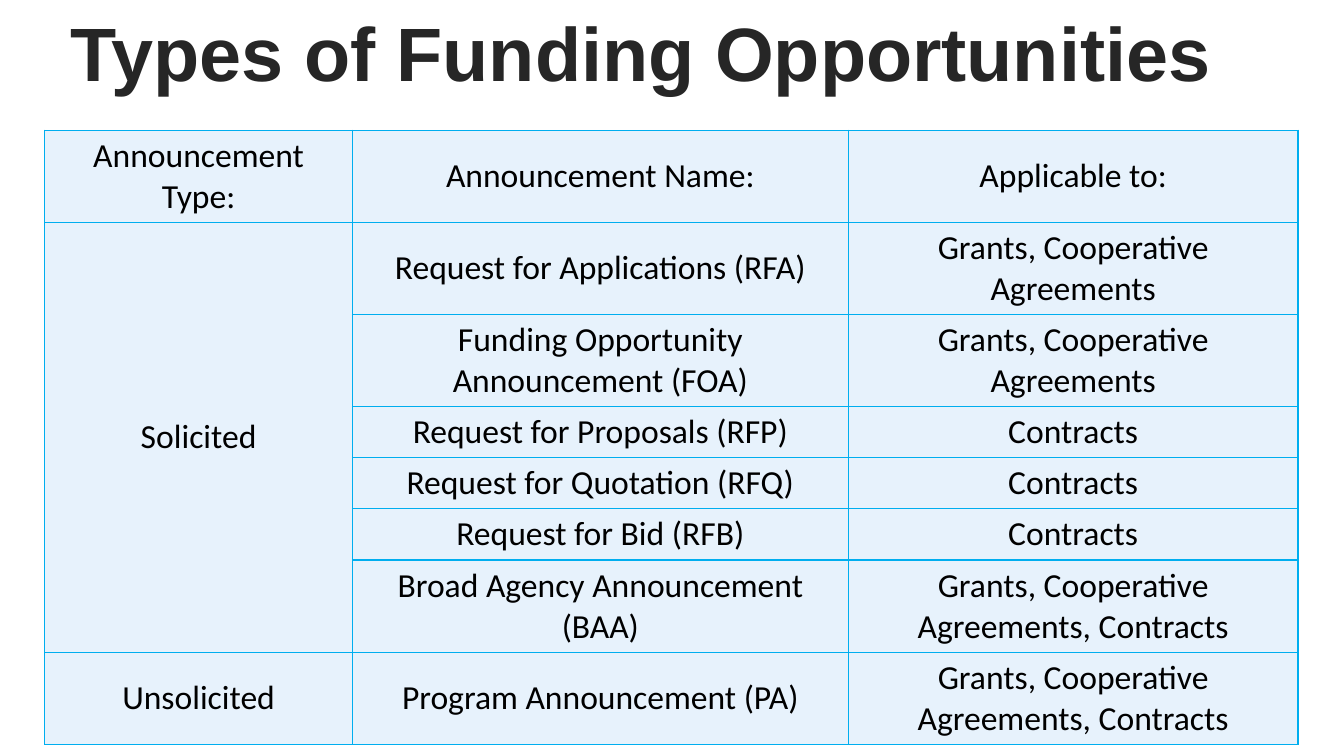
import pptx
import pptx.dml.color
import pptx.enum.text
import pptx.oxml
import pptx.oxml.ns
import pptx.util
from pptx.util import Cm

RGBColor = pptx.dml.color.RGBColor
WHITE = RGBColor(0xFF, 0xFF, 0xFF)
BLACK = RGBColor(0, 0, 0)
CHARCOAL = RGBColor(0x26, 0x26, 0x26)
PALE_BLUE = RGBColor(0xE7, 0xF2, 0xFC)
CYAN = RGBColor(0x00, 0xAE, 0xEF)

PP_ALIGN = pptx.enum.text.PP_ALIGN
MIDDLE = pptx.enum.text.MSO_ANCHOR.MIDDLE

GRANTS = "Grants, Cooperative Agreements"
ALL_AWARDS = "Grants, Cooperative Agreements, Contracts"
ROWS = [
    ("Announcement Type:", "Announcement Name:", "Applicable to:"),
    ("Solicited", "Request for Applications (RFA)", GRANTS),
    ("", "Funding Opportunity Announcement (FOA)", GRANTS),
    ("", "Request for Proposals (RFP)", "Contracts"),
    ("", "Request for Quotation (RFQ)", "Contracts"),
    ("", "Request for Bid (RFB)", "Contracts"),
    ("", "Broad Agency Announcement (BAA)", ALL_AWARDS),
    ("Unsolicited", "Program Announcement (PA)", ALL_AWARDS),
]
COLUMN_WIDTHS = [7.75, 12.5, 11.33]
ONE_LINE, TWO_LINES = 1.29, 2.32


class Deck:
    title_font, title_size = "Arial", 54
    body_font, body_size = "Calibri", 24
    border_width = 1

    def __init__(self):
        self.prs = pptx.Presentation()
        self.prs.slide_width, self.prs.slide_height = Cm(33.87), Cm(19.05)

    def add_slide(self):
        self.s = self.prs.slides.add_slide(self.prs.slide_layouts[5])
        self.s.background.fill.solid()
        self.s.background.fill.fore_color.rgb = WHITE

    def add_run(self, p, text, font, size, color, bold=False):
        r = p.add_run()
        r.text = text
        r.font.name, r.font.size = font, pptx.util.Pt(size)
        r.font.bold, r.font.color.rgb = bold, color

    def title(self, text, left, top, width, height):
        sp = self.s.shapes.title
        sp.left, sp.top, sp.width, sp.height = map(Cm, (left, top, width, height))
        tf = sp.text_frame
        tf.word_wrap = True
        tf.auto_size = pptx.enum.text.MSO_AUTO_SIZE.NONE
        tf.vertical_anchor = MIDDLE
        p = tf.paragraphs[0]
        p.alignment = PP_ALIGN.LEFT
        self.add_run(p, text, self.title_font, self.title_size, CHARCOAL, True)

    def table(self, rows, left, top, widths, heights):
        frame = self.s.shapes.add_table(
            len(rows), len(widths), Cm(left), Cm(top),
            Cm(sum(widths)), Cm(sum(heights)))
        table = frame.table
        table.first_row = table.horz_banding = False
        for column, width in zip(table.columns, widths):
            column.width = Cm(width)
        for row, height, texts in zip(table.rows, heights, rows):
            row.height = Cm(height)
            for cell, text in zip(row.cells, texts):
                self.cell(cell, text)
        return table

    def cell(self, cell, text):
        cell.fill.solid()
        cell.fill.fore_color.rgb = PALE_BLUE
        cell.vertical_anchor = MIDDLE
        self.borders(cell)
        if text:
            p = cell.text_frame.paragraphs[0]
            p.alignment = PP_ALIGN.CENTER
            self.add_run(p, text, self.body_font, self.body_size, BLACK)

    def borders(self, cell):
        """Draw all four edges; they must precede the fill in the XML."""
        props = cell._tc.get_or_add_tcPr()
        for i, side in enumerate(("lnL", "lnR", "lnT", "lnB")):
            props.insert(i, pptx.oxml.parse_xml(
                f'<a:{side} {pptx.oxml.ns.nsdecls("a")} '
                f'w="{pptx.util.Pt(self.border_width)}"><a:solidFill>'
                f'<a:srgbClr val="{CYAN}"/></a:solidFill></a:{side}>'))


def main():
    deck = Deck()
    deck.add_slide()
    deck.title("Types of Funding Opportunities", 1.53, 0, 29.92, 2.57)
    heights = [ONE_LINE if row[2] == "Contracts" else TWO_LINES for row in ROWS]
    table = deck.table(ROWS, 1.13, 3.28, COLUMN_WIDTHS, heights)
    table.cell(1, 0).merge(table.cell(6, 0))
    deck.prs.save("out.pptx")


if __name__ == "__main__":
    main()
